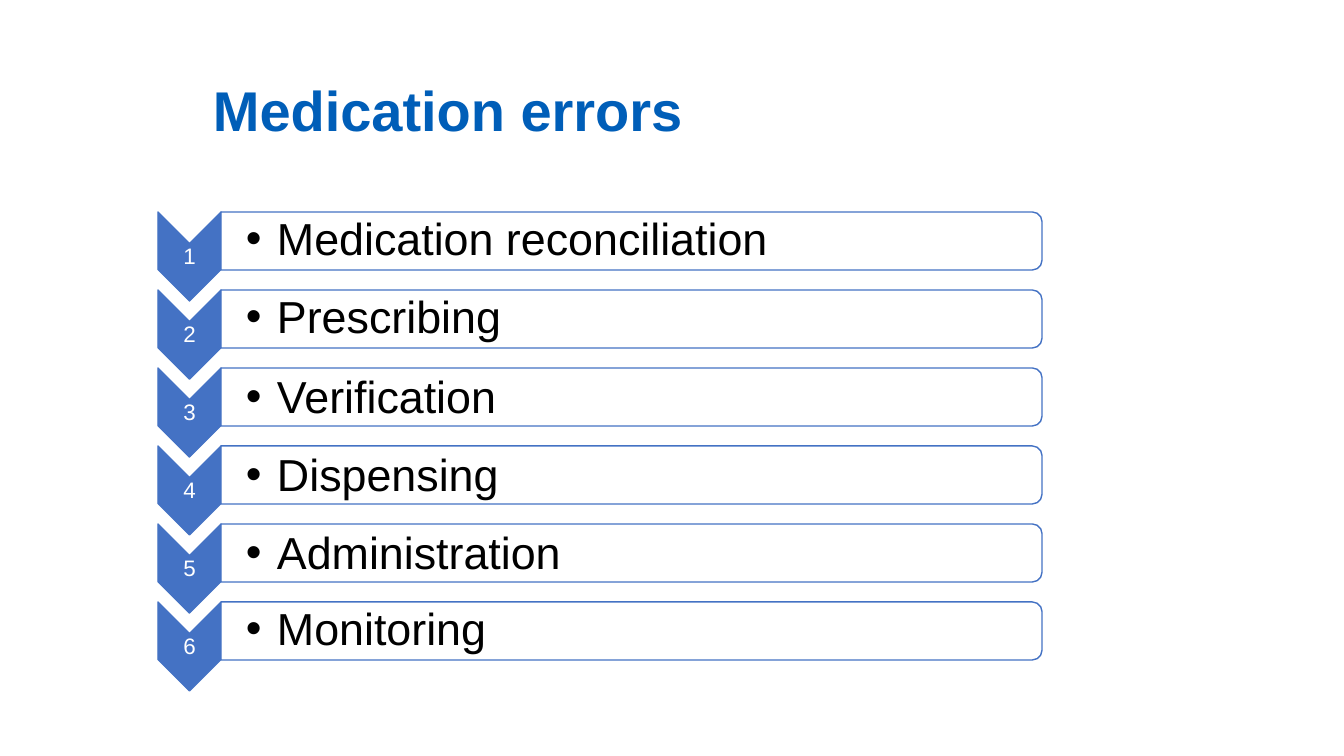
"""Build the slide listing six numbered stages of medication errors."""
from pptx import Presentation
from pptx.dml.color import RGBColor
from pptx.enum.shapes import MSO_SHAPE as Shape
from pptx.enum.text import MSO_ANCHOR as Anchor, PP_ALIGN as Align
from pptx.oxml.ns import qn
from pptx.util import Pt
from lxml.etree import SubElement

TITLE = "Medication errors"
STAGES = [
    ("Medication reconciliation", 0),
    ("Prescribing", 0),
    ("Verification", 2),
    ("Dispensing", 2),
    ("Administration", 2),
    ("Monitoring", 0),
]
BLUE, WHITE = "4472C4", "FFFFFF"
TITLE_FONT = {"size": Pt(40), "bold": True}
NUMBER_FONT = {"size": Pt(16)}
STAGE_FONT = {"size": Pt(32)}

SCALE = 914400 / 100.8
LEFT, TOP, PITCH = 158, 212, 78
CHEVRON_WIDTH, CHEVRON_HEIGHT = 63, 89
BAR_WIDTH, BAR_HEIGHT = 821, 58
NUMBER_TOP, NUMBER_HEIGHT = 32, 26
STAGE_TOP, STAGE_HEIGHT = 3, 52
HANG = 31


def emu(px):
    return round(px * SCALE)


def rgb(value):
    return RGBColor.from_string(value)


def add_turned(slide, preset, left, top, width, height, fill):
    """Add a preset turned by 90 degrees that shows in the given frame."""
    turned_left = left + (width - height) / 2
    turned_top = top + (height - width) / 2
    turned = slide.shapes.add_shape(
        preset, *map(emu, (turned_left, turned_top, height, width)))
    turned.rotation = 90
    turned.shadow.inherit = False
    turned.fill.solid()
    turned.fill.fore_color.rgb = rgb(fill)
    turned.line.color.rgb = rgb(BLUE)
    turned.line.width = Pt(1)
    return turned


def add_text(slide, wording, frame, insets, font, color, align=Align.LEFT, bullet=False):
    """Add one line of text, centred in height, with an optional bullet."""
    text = slide.shapes.add_textbox(*map(emu, frame)).text_frame
    text.word_wrap = True
    text.vertical_anchor = Anchor.MIDDLE
    sides = ("margin_left", "margin_top", "margin_right", "margin_bottom")
    for side, inset in zip(sides, insets):
        setattr(text, side, emu(inset))
    line = text.paragraphs[0]
    line.text = wording
    line.alignment = align
    line.line_spacing = 0.9
    if bullet:
        properties = line._p.get_or_add_pPr()
        properties.set("marL", str(emu(HANG)))
        properties.set("indent", str(-emu(HANG)))
        SubElement(properties, qn("a:buFont"), typeface="Arial")
        SubElement(properties, qn("a:buChar"), char="•")
    run_font = line.runs[0].font
    for name, value in {"name": "Arial", **font}.items():
        setattr(run_font, name, value)
    run_font.color.rgb = rgb(color)


def add_stage(slide, index, stage, nudge):
    """Add one numbered chevron with its bar."""
    top = TOP + index * PITCH
    bar_left = LEFT + CHEVRON_WIDTH
    add_turned(slide, Shape.CHEVRON, LEFT, top, CHEVRON_WIDTH, CHEVRON_HEIGHT, BLUE)
    add_text(slide, str(index + 1), (LEFT, top + NUMBER_TOP, CHEVRON_WIDTH, NUMBER_HEIGHT),
             (1, 1, 1, 1), NUMBER_FONT, WHITE, Align.CENTER)
    bar = add_turned(slide, Shape.ROUND_2_SAME_RECTANGLE, bar_left, top,
                     BAR_WIDTH, BAR_HEIGHT, WHITE)
    bar_color = bar._element.spPr.find(qn("a:solidFill"))[0]
    SubElement(bar_color, qn("a:alpha"), val="90000")
    add_text(slide, stage, (bar_left, top + STAGE_TOP + nudge, BAR_WIDTH, STAGE_HEIGHT),
             (25, 2, 2, 2), STAGE_FONT, "000000", bullet=True)


def main():
    deck = Presentation()
    deck.slide_width, deck.slide_height = emu(1344), emu(756)
    slide = deck.slides.add_slide(deck.slide_layouts[6])
    add_text(slide, TITLE, (213, 40, 856, 146), (0, 0, 0, 0), TITLE_FONT, "005EB8")
    for index, (stage, nudge) in enumerate(STAGES):
        add_stage(slide, index, stage, nudge)
    deck.save("out.pptx")


if __name__ == "__main__":
    main()
